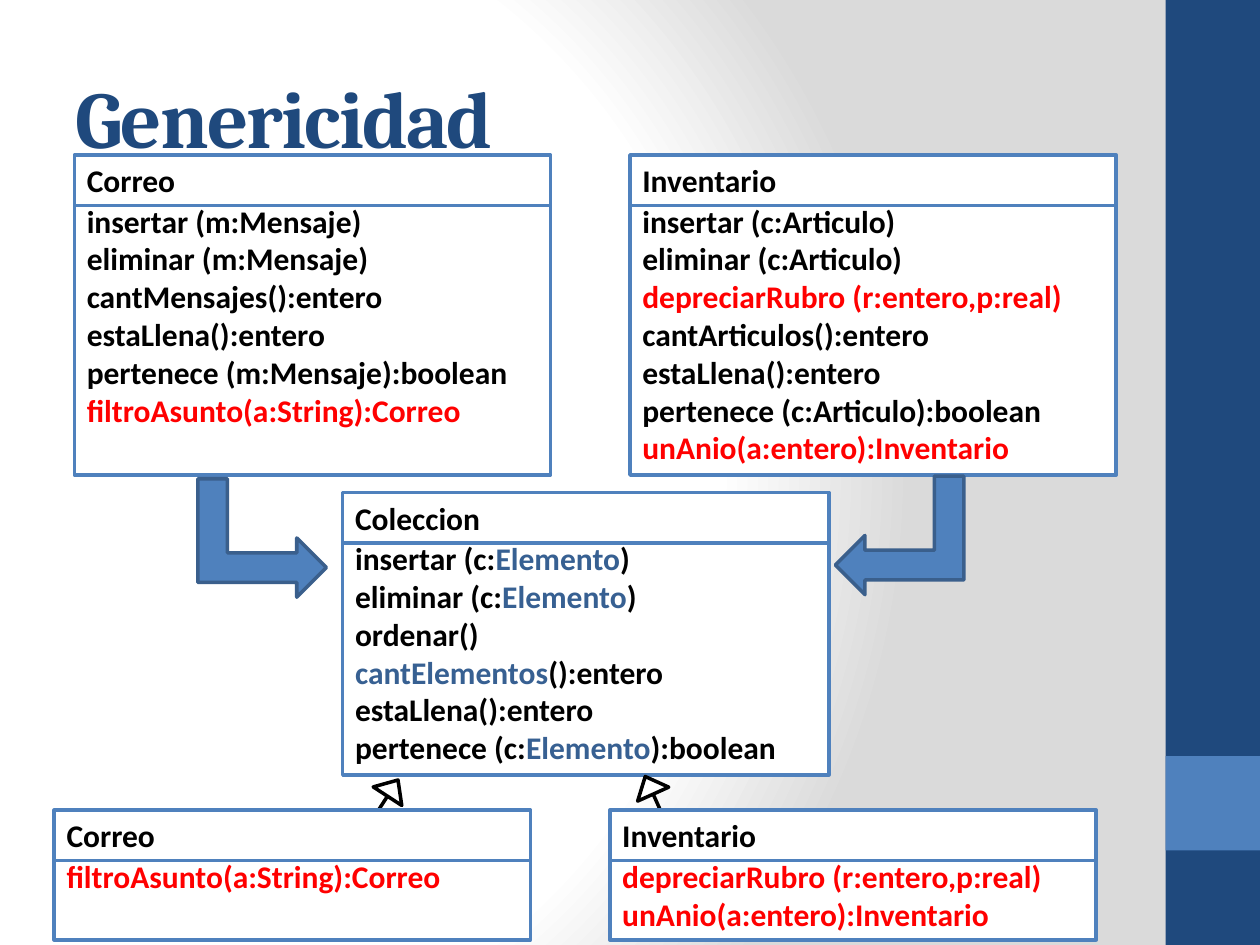
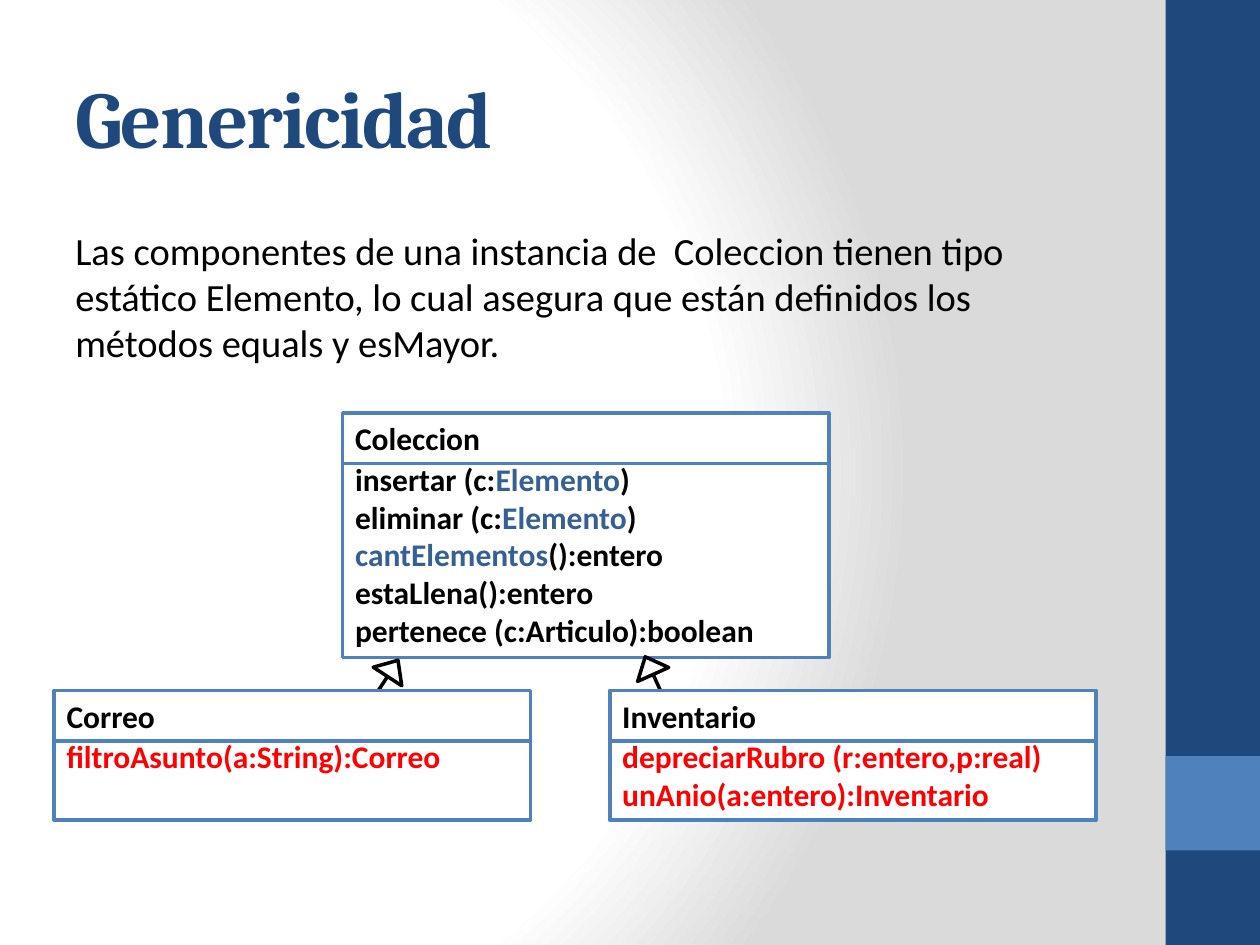
from pptx import Presentation
from pptx.dml.color import RGBColor
from pptx.enum.shapes import MSO_SHAPE
from pptx.enum.text import MSO_ANCHOR
from pptx.oxml import parse_xml
from pptx.oxml.ns import nsdecls
from pptx.util import Inches, Pt

RECTANGLE = MSO_SHAPE.RECTANGLE
RIGHT_ARROW = MSO_SHAPE.RIGHT_ARROW
BENT_ARROW = MSO_SHAPE.BENT_UP_ARROW
TOP = MSO_ANCHOR.TOP
MIDDLE = MSO_ANCHOR.MIDDLE
color = RGBColor.from_string

NAVY = "1F497D"
BLUE = "4F81BD"
ARROW_EDGE = "3A5F8C"
GENERIC = "376092"
RED = "FF0000"
BLACK = "000000"
WHITE = "FFFFFF"

HEADER_HEIGHT = 0.4
BODY_OFFSET = 0.32
CORREO_WIDTH = 3.78
CLASS_WIDTH = 3.86

CORREO_OWN = ["filtroAsunto(a:String):Correo"]
INVENTARIO_OWN = ["depreciarRubro (r:entero,p:real)", "unAnio(a:entero):Inventario"]
SPECIFIC = CORREO_OWN + INVENTARIO_OWN

CORREO = [
    "insertar (m:Mensaje)",
    "eliminar (m:Mensaje)",
    "cantMensajes():entero",
    "estaLlena():entero",
    "pertenece (m:Mensaje):boolean",
    "filtroAsunto(a:String):Correo",
]
INVENTARIO = [
    "insertar (c:Articulo)",
    "eliminar (c:Articulo)",
    "depreciarRubro (r:entero,p:real)",
    "cantArticulos():entero",
    "estaLlena():entero",
    "pertenece (c:Articulo):boolean",
    "unAnio(a:entero):Inventario",
]
COLECCION_SORTED = [
    "insertar (c:|Elemento|)",
    "eliminar (c:|Elemento|)",
    "ordenar()",
    "|cantElementos|():entero",
    "estaLlena():entero",
    "pertenece (c:|Elemento|):boolean",
]
COLECCION = [
    "insertar (c:|Elemento|)",
    "eliminar (c:|Elemento|)",
    "|cantElementos|():entero",
    "estaLlena():entero",
    "pertenece (c:Articulo):boolean",
]


def add_shape(slide, kind, left, top, width, height, fill, line=None, rotation=0):
    shape = slide.shapes.add_shape(
        kind, Inches(left), Inches(top), Inches(width), Inches(height))
    shape.shadow.inherit = False
    shape.rotation = rotation
    shape.fill.solid()
    shape.fill.fore_color.rgb = color(fill)
    if line:
        shape.line.color.rgb = color(line)
        shape.line.width = Pt(2)
    else:
        shape.line.fill.background()
    return shape


def add_class(slide, name, methods, left, top, width, body_height):
    parts = [(methods, top + BODY_OFFSET, body_height), ([name], top, HEADER_HEIGHT)]
    for lines, part_top, height in parts:
        shape = add_shape(slide, RECTANGLE, left, part_top, width, height, WHITE, BLUE)
        frame = shape.text_frame
        frame.word_wrap = True
        frame.vertical_anchor = TOP
        for number, text in enumerate(lines):
            paragraph = frame.add_paragraph() if number else frame.paragraphs[0]
            paragraph.alignment = 1
            paragraph.font.name = "Calibri"
            paragraph.font.size = Pt(18)
            paragraph.font.bold = True
            base = RED if text in SPECIFIC else BLACK
            for position, piece in enumerate(text.split("|")):
                if piece:
                    run = paragraph.add_run()
                    run.text = piece
                    run.font.color.rgb = color(GENERIC if position % 2 else base)


presentation = Presentation()
presentation.slide_width = Inches(10)
presentation.slide_height = Inches(7.5)

master = presentation.slide_master
master.background.fill.solid()
background = master.element.xpath("p:cSld/p:bg/p:bgPr")[0]
stops = "".join(
    f'<a:gs pos="{place * 1000}"><a:srgbClr val="{stop}"/></a:gs>'
    for place, stop in [(0, WHITE), (75, WHITE), (100, "DADADA")])
background.replace(background[0], parse_xml(
    f'<a:gradFill {nsdecls("a")} rotWithShape="1"><a:gsLst>{stops}</a:gsLst>'
    '<a:path path="circle"><a:fillToRect l="20000" t="50000" r="100000" b="50000"/>'
    '</a:path></a:gradFill>'))

diagrams = [
    (COLECCION_SORTED, 3.91, 1.92, 6.43),
    (COLECCION, 3.28, 1.62, 5.48),
]
slides = []
for methods, parent_top, parent_height, child_top in diagrams:
    slide = presentation.slides.add_slide(presentation.slide_layouts[6])
    slides.append(slide)
    add_shape(slide, RECTANGLE, 9.25, 0, 0.75, 7.5, NAVY)
    add_shape(slide, RECTANGLE, 9.25, 6, 0.75, 0.75, BLUE)

    title = slide.shapes.add_textbox(Inches(0.5), Inches(0.3), Inches(8.33), Inches(1.25))
    title.text_frame.word_wrap = True
    title.text_frame.vertical_anchor = MIDDLE
    paragraph = title.text_frame.paragraphs[0]
    run = paragraph.add_run()
    run.text = "Genericidad"
    run.font.name = "Cambria"
    run.font.size = Pt(46)
    run.font.bold = True
    run.font.color.rgb = color(NAVY)
    run.font._element.set("spc", "-100")

    if methods is COLECCION_SORTED:
        add_class(slide, "Correo", CORREO, 0.59, 1.23, CORREO_WIDTH, 2.22)
        add_class(slide, "Inventario", INVENTARIO, 5, 1.23, CLASS_WIDTH, 2.22)
    add_class(slide, "Coleccion", methods, 2.72, parent_top, CLASS_WIDTH, parent_height)

    for left, rotation in [(2.58, 303), (4.9, 245.8)]:
        arrow = add_shape(slide, RIGHT_ARROW, left, child_top - 0.06, 0.75, 0.27,
                          WHITE, BLACK, rotation)
        arrow.adjustments[0] = 0
        arrow.adjustments[1] = 0.567
    add_class(slide, "Correo", CORREO_OWN, 0.43, child_top, CORREO_WIDTH, 0.71)
    add_class(slide, "Inventario", INVENTARIO_OWN, 4.84, child_top, CLASS_WIDTH, 0.71)

comparison, explanation = slides
add_shape(comparison, BENT_ARROW, 1.61, 3.76, 0.94, 1.02, BLUE, ARROW_EDGE, 90)
mirrored = add_shape(comparison, BENT_ARROW, 6.67, 3.74, 0.94, 1.02, BLUE, ARROW_EDGE, 90)
mirrored.element.spPr.xfrm.set("flipV", "1")

body = explanation.shapes.add_textbox(
    Inches(0.5), Inches(1.75), Inches(8.33), Inches(1.37))
body.text_frame.word_wrap = True
paragraph = body.text_frame.paragraphs[0]
paragraph.text = (
    "Las componentes de una instancia de  Coleccion tienen tipo estático Elemento, "
    "lo cual asegura que están definidos los métodos equals y esMayor.")
paragraph.font.name = "Calibri"
paragraph.font.size = Pt(22)
paragraph.font.color.rgb = color(BLACK)

presentation.save("out.pptx")
